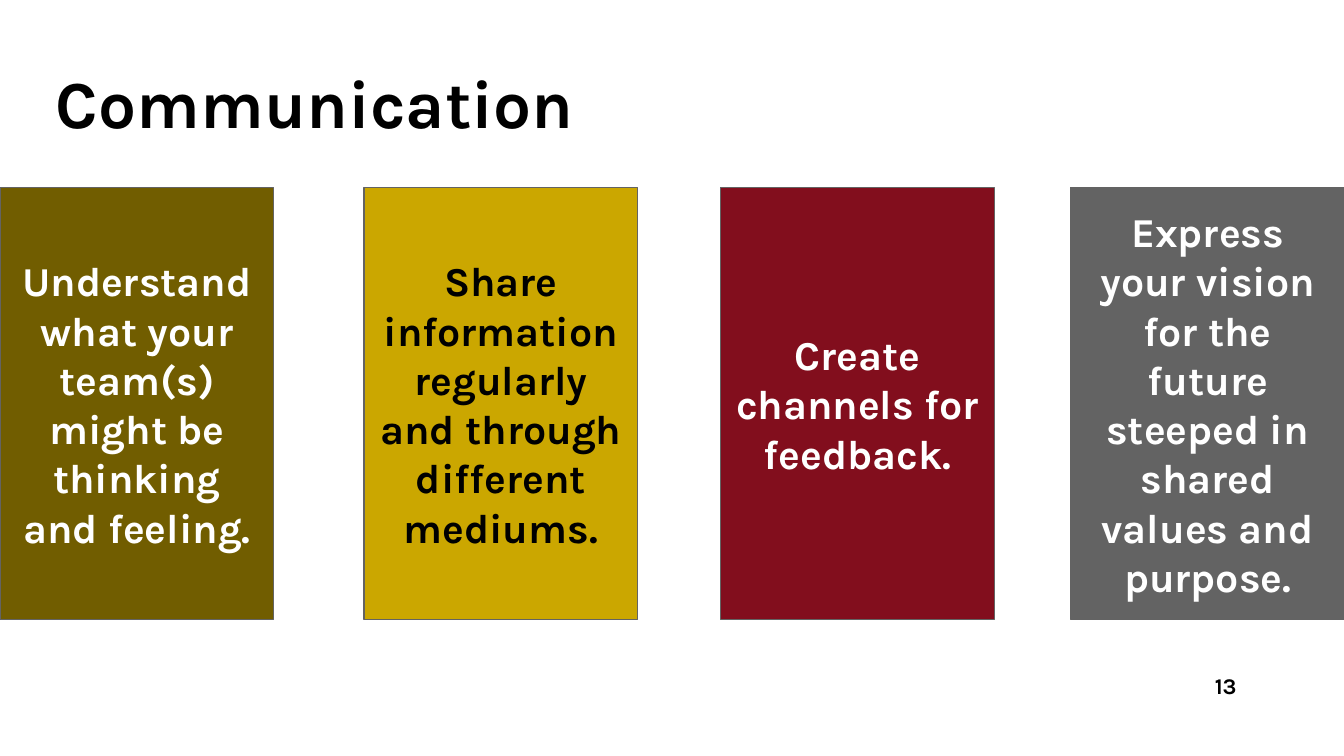
import pptx
import pptx.util
import pptx.dml.color
import pptx.enum.shapes
import pptx.enum.text

Pt = pptx.util.Pt
RGB = pptx.dml.color.RGBColor
ALIGN = pptx.enum.text.PP_ALIGN
ANCHOR = pptx.enum.text.MSO_ANCHOR

BLACK = RGB(0x00, 0x00, 0x00)
WHITE = RGB(0xFF, 0xFF, 0xFF)
OLIVE = RGB(0x71, 0x5D, 0x00)
GOLD = RGB(0xCB, 0xA7, 0x00)
RED = RGB(0x82, 0x0E, 0x1D)
GRAY = RGB(0x63, 0x63, 0x63)

# Left edge, fill, text colour and wording of each card
CARDS = [
    (0, OLIVE, WHITE, "Understand what your team(s) might be thinking and feeling."),
    (195, GOLD, BLACK, "Share information regularly and through different mediums."),
    (386, RED, WHITE, "Create channels for feedback."),
    (573.6, GRAY, WHITE,
     "Express your vision for the future steeped in shared values and purpose."),
]


def set_text(shape, text, size, color, align, anchor, inset):
    frame = shape.text_frame
    frame.text = text
    frame.word_wrap = True
    frame.vertical_anchor = anchor
    frame.margin_left = frame.margin_right = Pt(inset)
    frame.margin_top = frame.margin_bottom = Pt(inset)
    line = frame.paragraphs[0]
    line.alignment = align
    font = line.runs[0].font
    font.name = "Karla"
    font.size = Pt(size)
    font.bold = True
    font.color.rgb = color


def add_title(slide, box, text):
    title = slide.shapes.add_textbox(*map(Pt, box))
    set_text(title, text, 36, BLACK, ALIGN.LEFT, ANCHOR.MIDDLE, 0)


def add_number(slide, box, text):
    number = slide.shapes.add_textbox(*map(Pt, box))
    set_text(number, text, 12, BLACK, ALIGN.RIGHT, ANCHOR.TOP, 7.2)


def add_card(slide, box, fill, color, text):
    card = slide.shapes.add_shape(
        pptx.enum.shapes.MSO_SHAPE.RECTANGLE, *map(Pt, box))
    card.shadow.inherit = False
    card.fill.solid()
    card.fill.fore_color.rgb = fill
    card.line.color.rgb = GRAY
    card.line.width = Pt(0.75)
    set_text(card, text, 22, color, ALIGN.CENTER, ANCHOR.MIDDLE, 7.2)


def main():
    deck = pptx.Presentation()
    deck.slide_width, deck.slide_height = Pt(720), Pt(405)
    slide = deck.slides.add_slide(deck.slide_layouts[6])

    # Heading and page number
    add_title(slide, (30, 30, 660, 49), "Communication")
    add_number(slide, (626.4, 352.8, 43.2, 31), "13")

    # Row of cards
    for left, fill, color, text in CARDS:
        add_card(slide, (left, 100.6, 146.7, 231.2), fill, color, text)

    deck.save("out.pptx")


if __name__ == "__main__":
    main()
